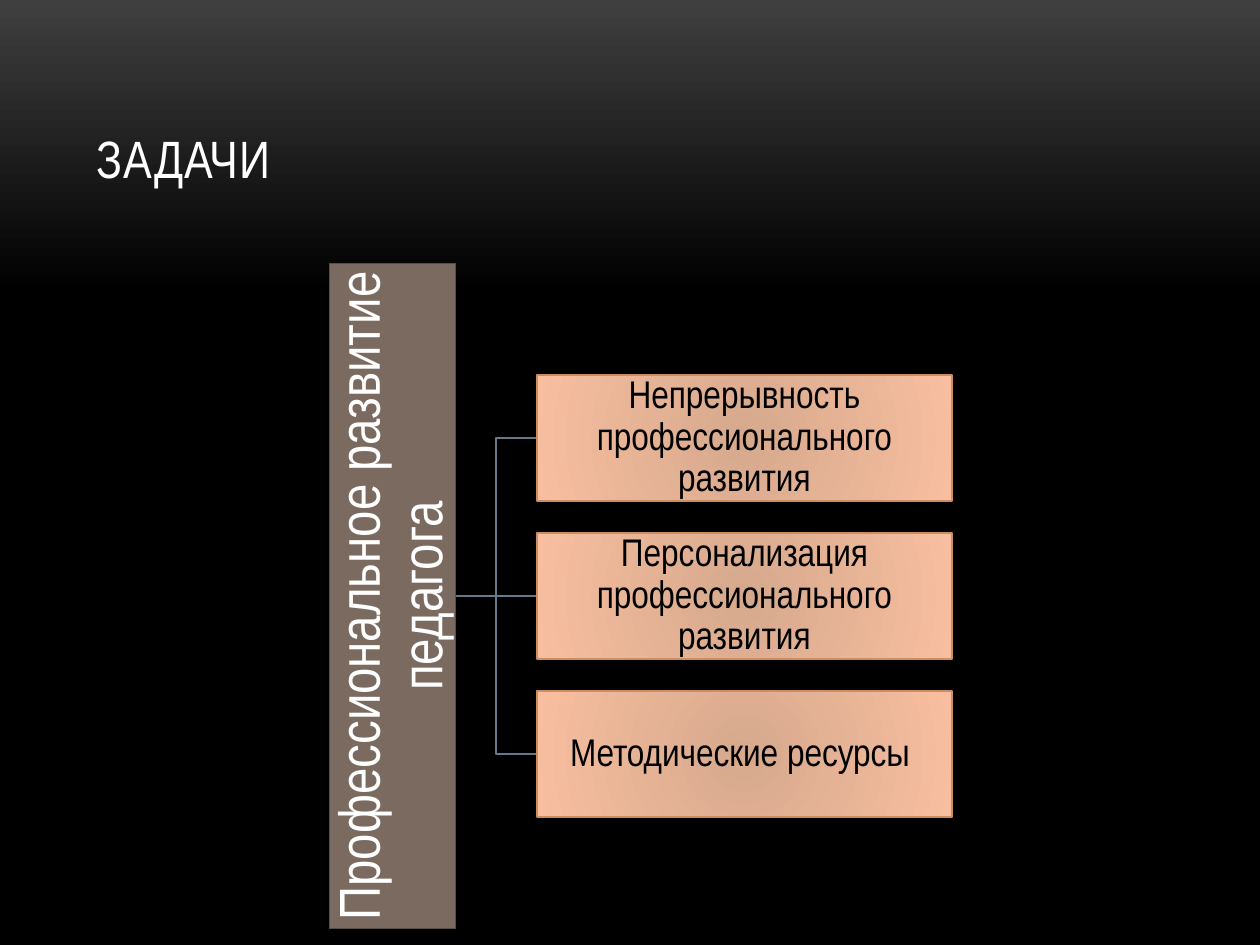
from lxml import etree
from pptx import Presentation
from pptx.dml.color import RGBColor
from pptx.enum.shapes import MSO_CONNECTOR as CONN, MSO_SHAPE as SHAPE
from pptx.enum.text import MSO_ANCHOR as ANCHOR, PP_ALIGN as ALIGN
from pptx.oxml.ns import qn
from pptx.util import Pt

PX = 914400 / 126  # EMU per px
WHITE = RGBColor(0xFF, 0xFF, 0xFF)
BLACK = RGBColor(0x00, 0x00, 0x00)
GREY = RGBColor(0x3F, 0x3F, 0x3F)
BROWN = RGBColor(0x7A, 0x6A, 0x60)
DARK_BROWN = RGBColor(0x5A, 0x4E, 0x47)
TAN = RGBColor(0xD6, 0xA9, 0x8D)
PEACH = RGBColor(0xF8, 0xBE, 0x9F)
ORANGE = RGBColor(0xCC, 0x8E, 0x60)
STEEL = RGBColor(0x65, 0x79, 0x8B)


def px(*values):
    return [round(v * PX) for v in values]


class Deck:
    font = "Arial Narrow"

    def __init__(self, width, height):
        self.prs = Presentation()
        self.prs.slide_width, self.prs.slide_height = px(width, height)
        self.s = self.prs.slides.add_slide(self.prs.slide_layouts[6])

    def gradient(self, fill, first, last, end=1.0):
        fill.gradient()
        stops = fill.gradient_stops
        for stop, color, pos in zip(stops, (first, last), (0, end)):
            stop.color.rgb = color
            stop.position = pos

    def background(self, top, bottom, end):
        fill = self.s.background.fill
        self.gradient(fill, top, bottom, end)
        fill.gradient_angle = 270

    def add_text(self, sp, text, size, color, frame, para):
        tf = sp.text_frame
        p = tf.paragraphs[0]
        r = p.add_run()
        r.text = text
        font = {"name": self.font, "size": Pt(size)}
        for obj, values in ((tf, frame), (p, para), (r.font, font)):
            for name, value in values.items():
                setattr(obj, name, value)
        r.font.color.rgb = color
        return r

    def title(self, text, box, size, color):
        sp = self.s.shapes.add_textbox(*px(*box))
        frame = {"word_wrap": True, "vertical_anchor": ANCHOR.BOTTOM}
        r = self.add_text(sp, text, size, color, frame, {})
        r.font._element.set("spc", "50")

    def block(self, text, box, size, color, fill, line, line_width, rotation=0):
        sp = self.s.shapes.add_shape(SHAPE.RECTANGLE, *px(*box))
        sp.shadow.inherit = False
        sp.rotation = rotation
        sp.line.color.rgb = line
        sp.line.width = Pt(line_width)
        if isinstance(fill, RGBColor):
            sp.fill.solid()
            sp.fill.fore_color.rgb = fill
        else:
            self.gradient(sp.fill, *fill)
            self.make_radial(sp)
        frame = {"word_wrap": True, "vertical_anchor": ANCHOR.MIDDLE}
        for side in ("left", "right", "top", "bottom"):
            frame[f"margin_{side}"] = Pt(1.5)
        para = {"alignment": ALIGN.CENTER, "line_spacing": 0.9}
        self.add_text(sp, text, size, color, frame, para)

    def make_radial(self, sp):
        grad = sp._element.spPr.find(qn("a:gradFill"))
        grad.remove(grad.find(qn("a:lin")))
        radial = etree.SubElement(grad, qn("a:path"), {"path": "circle"})
        center = dict.fromkeys("ltrb", "50000")
        etree.SubElement(radial, qn("a:fillToRect"), center)

    def link(self, start, end, color, width):
        kind = CONN.STRAIGHT if start[1] == end[1] else CONN.ELBOW
        c = self.s.shapes.add_connector(kind, *px(*start, *end))
        c.line.color.rgb = color
        c.line.width = Pt(width)
        etree.SubElement(c._element.spPr, qn("a:effectLst"))


def main():
    deck = Deck(1260, 945)
    deck.background(GREY, BLACK, 0.31)
    deck.title("ЗАДАЧИ", (84, 38, 1092, 157), 30, WHITE)

    # Tree geometry: root bar, then equally spaced tasks
    tasks = [
        "Непрерывность профессионального развития",
        "Персонализация профессионального развития",
        "Методические ресурсы ",
    ]
    height, pitch = 126, 158
    root_right, task_left, task_width = 455, 537, 415
    middle, root_length = 596, 665
    centers = [middle + (i - 1) * pitch for i in range(len(tasks))]

    # Links lie behind the blocks
    for y in centers:
        deck.link((root_right, middle), (task_left, y), STEEL, 0.85)

    # Root bar, turned to read upwards
    root_left = root_right - (height + root_length) // 2
    root_box = (root_left, middle - height // 2, root_length, height)
    deck.block("Профессиональное развитие педагога", root_box, 33, WHITE,
               BROWN, DARK_BROWN, 0.85, rotation=270)

    # Tasks
    for text, y in zip(tasks, centers):
        box = (task_left, y - height // 2, task_width, height)
        deck.block(text, box, 22, BLACK, (TAN, PEACH), ORANGE, 0.75)

    deck.prs.save("out.pptx")


if __name__ == "__main__":
    main()
